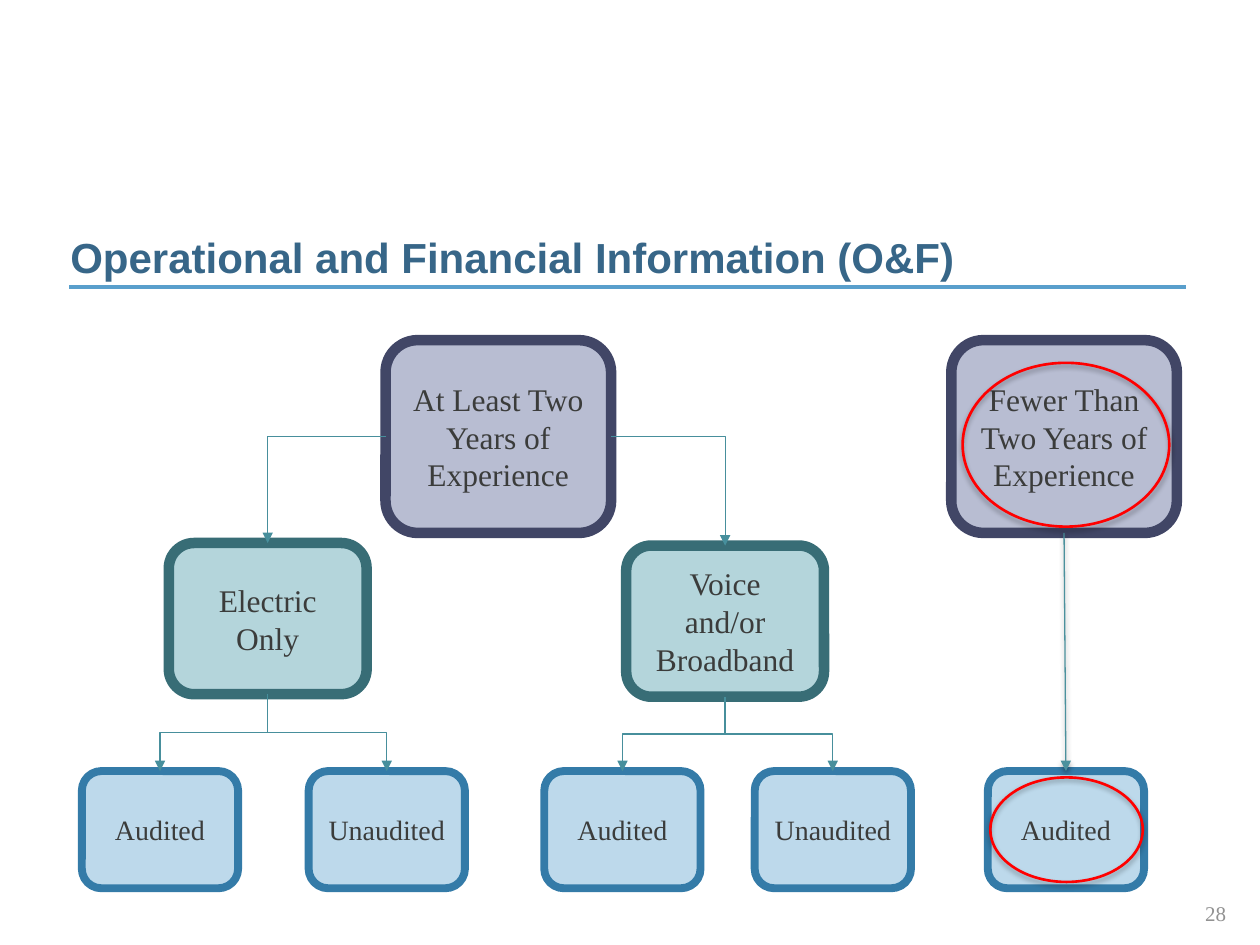
from dataclasses import dataclass
from lxml.etree import SubElement
from pptx import Presentation
from pptx.dml.color import RGBColor
from pptx.enum.shapes import MSO_CONNECTOR as Link, MSO_SHAPE as Kind
from pptx.enum.text import MSO_ANCHOR as Anchor, PP_ALIGN as Align
from pptx.oxml.ns import qn
from pptx.util import Inches, Pt

COLS, ROWS = 100, 75
SERIF = "Times New Roman"
INK, TEAL = "3B3C3B", "478F9C"

deck = Presentation()
deck.slide_width, deck.slide_height = Inches(10), Inches(7.5)
CELL = deck.slide_width / COLS
page = deck.slides.add_slide(deck.slide_layouts[6])
shapes = page.shapes


@dataclass(frozen=True)
class Tier:
    wide: float
    high: float
    fill: str
    edge: str
    line: float
    size: int
    pad: float


@dataclass(frozen=True)
class Node:
    name: str
    text: str
    tier: Tier
    col: float
    row: float


TOP = Tier(17.9, 15.3, "B8BDD2", "414666", 6, 18, 1.2)
MID = Tier(15.7, 12, "B4D5DB", "386D76", 6, 18, 1.2)
LOW = Tier(12.4, 9.3, "BDD9EB", "347BA8", 4.5, 16, 0.8)

NODES = [
    Node("two", "At Least Two Years of Experience", TOP, 30.6, 27),
    Node("few", "Fewer Than Two Years of Experience", TOP, 75.5, 27),
    Node("power", "Electric Only", MID, 13.4, 43.1),
    Node("voice", "Voice and/or Broadband", MID, 49.7, 43.3),
    Node("power yes", "Audited", LOW, 6.5, 61.2),
    Node("power no", "Unaudited", LOW, 24.5, 61.2),
    Node("voice yes", "Audited", LOW, 43.2, 61.2),
    Node("voice no", "Unaudited", LOW, 59.9, 61.2),
    Node("few yes", "Audited", LOW, 78.4, 61.2),
]
SIDES = [("two", "power"), ("two", "voice")]
FORKS = [(mid, f"{mid} {end}") for mid in ("power", "voice") for end in ("yes", "no")]
RINGS = [(76.4, 28.8, 16.4, 13), (78.6, 61.7, 12.1, 8.3)]


def grid(*cells: float) -> list[int]:
    return [round(cell * CELL) for cell in cells]


def hue(code: str) -> RGBColor:
    return RGBColor.from_string(code)


def style(item, values: dict) -> None:
    for key, value in values.items():
        setattr(item, key, value)


def stroke(shape, code: str, width: float) -> None:
    shape.line.color.rgb = hue(code)
    shape.line.width = Pt(width)


def write(shape, text: str, size: int, code: str, font: str = SERIF,
          align: Align = Align.CENTER, anchor: Anchor = Anchor.MIDDLE,
          bold: bool = False, pad: float = 1) -> None:
    side = grid(pad)[0]
    frame = shape.text_frame
    style(frame, {"word_wrap": True, "vertical_anchor": anchor,
                  "margin_left": side, "margin_right": side})
    para = frame.paragraphs[0]
    para.alignment = align
    run = para.add_run()
    run.text = text
    style(run.font, {"name": font, "size": Pt(size), "bold": bold})
    run.font.color.rgb = hue(code)


def shade(shape, alpha: int = 0, dist: float = 0) -> None:
    props = shape._element.spPr
    for old in props.findall(qn("a:effectLst")):
        props.remove(old)
    list_ = SubElement(props, qn("a:effectLst"))
    if alpha:
        drop = SubElement(list_, qn("a:outerShdw"), blurRad=str(Pt(3.1)),
                          dist=str(Pt(dist)), dir="5400000", rotWithShape="0")
        tint = SubElement(drop, qn("a:srgbClr"), val="000000")
        SubElement(tint, qn("a:alpha"), val=str(alpha * 1000))


def arrow(link, code: str = TEAL) -> None:
    stroke(link, code, 0.75)
    SubElement(link.line._get_or_add_ln(), qn("a:tailEnd"), type="triangle")
    shade(link)


def box(node: Node):
    tier = node.tier
    shape = shapes.add_shape(Kind.ROUNDED_RECTANGLE,
                             *grid(node.col, node.row, tier.wide, tier.high))
    shape.shadow.inherit = False
    shape.fill.solid()
    shape.fill.fore_color.rgb = hue(tier.fill)
    stroke(shape, tier.edge, tier.line)
    write(shape, node.text, tier.size, INK, pad=tier.pad)
    return shape


def mid(shape) -> int:
    return shape.left + shape.width // 2


def side(head, foot) -> None:
    left = mid(foot) < mid(head)
    start = head.left if left else head.left + head.width
    high = head.top + head.height // 2
    ends = sorted((start, mid(foot)))
    rows = (foot.top, high) if left else (high, foot.top)
    link = shapes.add_connector(Link.ELBOW, ends[0], rows[0], ends[1], rows[1])
    props = link._element.spPr
    props.find(qn("a:prstGeom")).set("prst", "bentConnector2")
    if left:
        props.find(qn("a:xfrm")).set("rot", "10800000")
    arrow(link)


def fork(head, foot) -> None:
    base = head.top + head.height
    tall, run = foot.top - base, mid(foot) - mid(head)
    x, y = (mid(head) + mid(foot)) // 2, (base + foot.top) // 2
    half = tall // 2 if run < 0 else -tall // 2
    rise = abs(run) // 2
    link = shapes.add_connector(Link.ELBOW, x - half, y - rise, x + half, y + rise)
    turn = "5400000" if run < 0 else "16200000"
    link._element.spPr.find(qn("a:xfrm")).set("rot", turn)
    arrow(link)


def drop(head, foot) -> None:
    link = shapes.add_connector(Link.STRAIGHT, mid(head), head.top, mid(foot), foot.top)
    link.begin_connect(head, 2)
    link.end_connect(foot, 0)
    arrow(link, "4B919D")
    shade(link, 38, 1.6)


def ring(*area: float) -> None:
    shape = shapes.add_shape(Kind.OVAL, *grid(*area))
    shape.fill.background()
    stroke(shape, "FF0000", 1.5)
    shade(shape, 35, 1.8)


rule = shapes.add_connector(Link.STRAIGHT, *grid(5.5, 22.8, 94.1, 22.8))
stroke(rule, "599FCC", 2.25)
shade(rule)
write(shapes.add_textbox(*grid(4.6, 17.9, 85.4, 6.7)),
      "Operational and Financial Information (O&F)", 24, "376688",
      "Arial", Align.LEFT, Anchor.TOP, True)

boxes = {node.name: box(node) for node in NODES}
for head, foot in SIDES:
    side(boxes[head], boxes[foot])
for head, foot in FORKS:
    fork(boxes[head], boxes[foot])
drop(boxes["few"], boxes["few yes"])
for area in RINGS:
    ring(*area)

write(shapes.add_textbox(*grid(75.8, 70.5, 22.5, 4)), "28", 12, "929292",
      align=Align.RIGHT)
deck.save("out.pptx")
